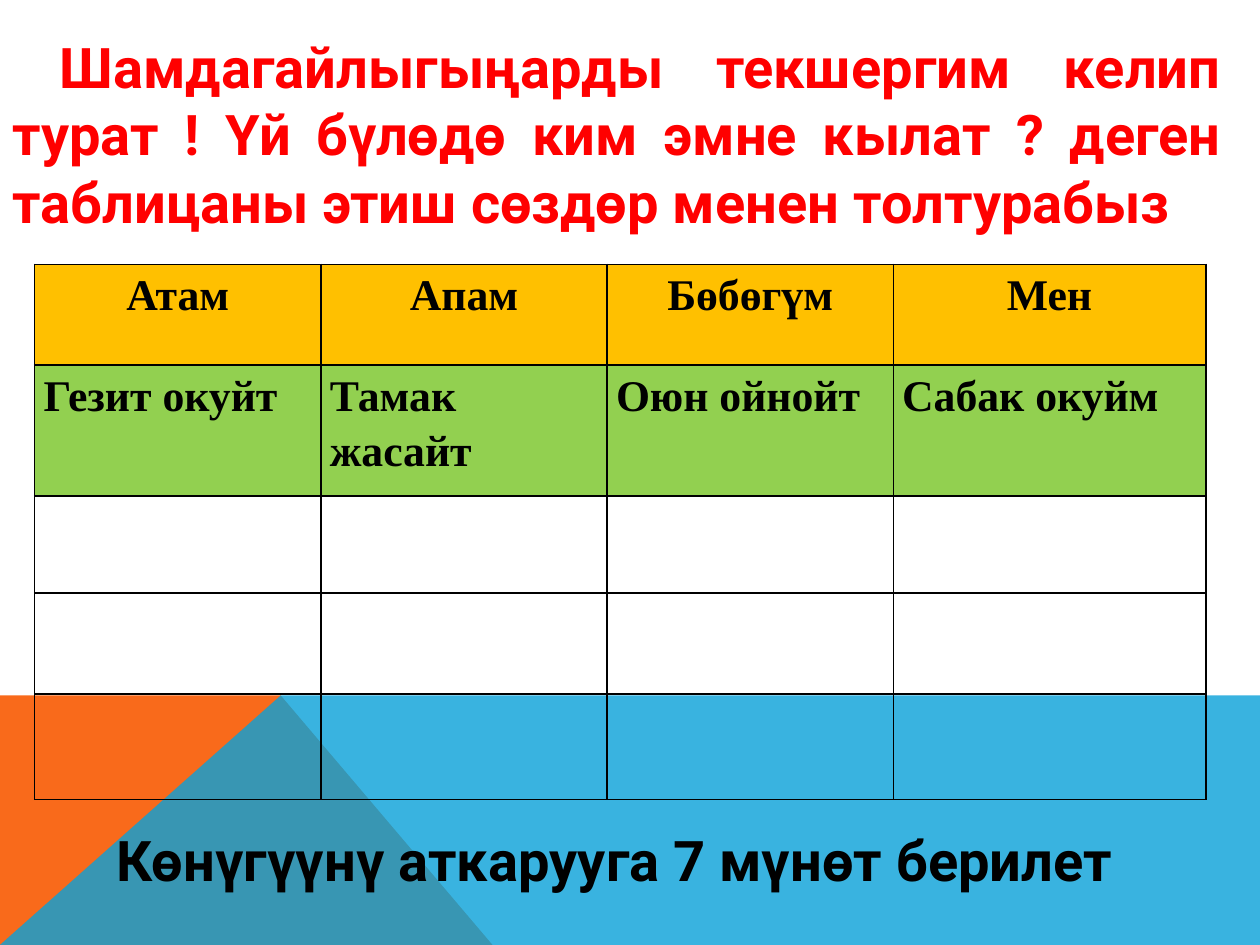
from dataclasses import dataclass

from lxml import etree
from pptx import Presentation
from pptx import util as u
from pptx.dml import color as col
from pptx.enum import text as t
from pptx.oxml import ns


@dataclass(frozen=True)
class Theme:
    orange: str = "F96A1B"
    blue: str = "08A1D9"
    red: str = "FF0000"
    black: str = "000000"
    gold: str = "FFC000"
    green: str = "92D050"
    sans: str = "Roboto"
    serif: str = "Times New Roman"
    large: int = 32
    cell: int = 25


THEME = Theme()
WIDTH, HEIGHT = 25.4, 19.05
BAND, PEAK = 14.02, 5.66


def rgb(code):
    return col.RGBColor.from_string(code)


def add_run(para, words, font, size, ink):
    run = para.add_run()
    run.text = words
    run.font.name, run.font.size, run.font.bold = font, u.Pt(size), True
    run.font.color.rgb = rgb(ink)


def add_area(slide, points, ink, alpha=None):
    spots = [(u.Cm(x), u.Cm(y)) for x, y in points]
    pen = slide.shapes.build_freeform(*spots[0], scale=1.0)
    pen.add_line_segments(spots[1:], close=True)
    area = pen.convert_to_shape()
    area.shadow.inherit = False
    area.fill.solid()
    area.fill.fore_color.rgb = rgb(ink)
    area.line.fill.background()
    if alpha:
        tint = area.fill._xPr.find(".//" + ns.qn("a:srgbClr"))
        etree.SubElement(tint, ns.qn("a:alpha"), val=str(alpha * 1000))


def set_text(shape, box, words, ink, align, indent):
    shape.left, shape.top, shape.width, shape.height = map(u.Cm, box)
    frame = shape.text_frame
    frame.word_wrap = True
    frame.auto_size = t.MSO_AUTO_SIZE.NONE
    frame.vertical_anchor = t.MSO_ANCHOR.TOP
    para = frame.paragraphs[0]
    para.alignment = align
    para._p.get_or_add_pPr().set("indent", str(u.Cm(indent)))
    add_run(para, words, THEME.sans, THEME.large, ink)


def add_edges(cell):
    props = cell._tc.get_or_add_tcPr()
    for side in ("lnL", "lnR", "lnT", "lnB"):
        edge = etree.SubElement(props, ns.qn("a:" + side), w=str(u.Pt(1)))
        fill = etree.SubElement(edge, ns.qn("a:solidFill"))
        etree.SubElement(fill, ns.qn("a:srgbClr"), val=THEME.black)


def set_cell(cell, words, fill, align):
    add_edges(cell)
    cell.margin_left = cell.margin_right = u.Cm(0.18)
    cell.margin_top = cell.margin_bottom = 0
    if not fill:
        cell.fill.background()
        return
    cell.fill.solid()
    cell.fill.fore_color.rgb = rgb(fill)
    para = cell.text_frame.paragraphs[0]
    para.alignment, para.line_spacing = align, 1.15
    add_run(para, words, THEME.serif, THEME.cell, THEME.black)


def add_grid(slide, left, top, widths, heights, rows):
    grid = slide.shapes.add_table(
        len(heights), len(widths), u.Cm(left), u.Cm(top),
        u.Cm(sum(widths)), u.Cm(sum(heights))).table
    grid.first_row = grid.horz_banding = False
    for part, width in zip(grid.columns, widths):
        part.width = u.Cm(width)
    for part, height in zip(grid.rows, heights):
        part.height = u.Cm(height)
    for y, (words, fill, align) in enumerate(rows):
        for x, word in enumerate(words):
            set_cell(grid.cell(y, x), word, fill, align)


def main():
    deck = Presentation()
    deck.slide_width, deck.slide_height = u.Cm(WIDTH), u.Cm(HEIGHT)
    slide = deck.slides.add_slide(deck.slide_layouts[5])

    add_area(slide, [(0, HEIGHT), (0, BAND), (PEAK, BAND), (9.93, HEIGHT)],
             THEME.orange)
    add_area(slide, [(0, HEIGHT), (PEAK, BAND), (WIDTH, BAND), (WIDTH, HEIGHT)],
             THEME.blue, 80)

    set_text(slide.shapes.title, (0, 0.53, 24.89, 4.37),
             "Шамдагайлыгыңарды текшергим келип турат ! "
             "Үй бүлөдө ким эмне кылат ? деген таблицаны "
             "этиш сөздөр менен толтурабыз",
             THEME.red, t.PP_ALIGN.JUSTIFY, 0.95)

    blank = ([""] * 4, None, None)
    rows = [
        (["Атам", "Апам", "Бөбөгүм", "Мен"], THEME.gold, t.PP_ALIGN.CENTER),
        (["Гезит окуйт", "Тамак жасайт", "Оюн ойнойт", "Сабак окуйм"],
         THEME.green, t.PP_ALIGN.JUSTIFY),
        blank, blank, blank,
    ]
    add_grid(slide, 0.7, 5.33, [5.77] * 3 + [6.3],
             [2.03, 2.64, 1.96, 2.03, 2.13], rows)

    note = slide.shapes.add_textbox(0, 0, 0, 0)
    set_text(note, (0.7, 16.51, 23.4, 1.63),
             "Көнүгүүнү аткарууга 7 мүнөт берилет",
             THEME.black, t.PP_ALIGN.LEFT, 1.4)
    deck.save("out.pptx")


if __name__ == "__main__":
    main()
